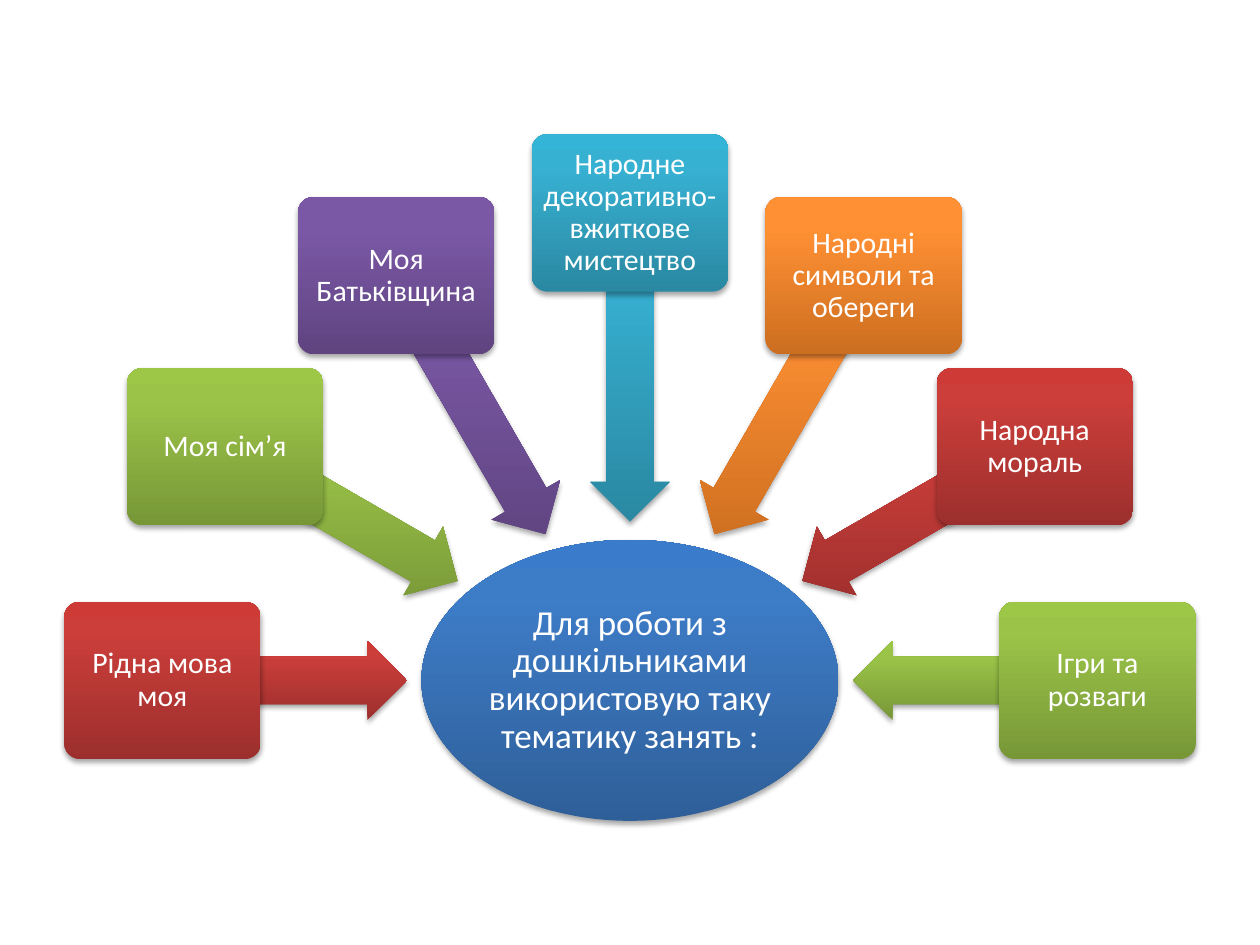
"""Builds a slide where seven topics point at a central theme."""
import math

import lxml.etree
import pptx
import pptx.dml.color
import pptx.enum.shapes
import pptx.enum.text
import pptx.oxml
import pptx.util

Inches = pptx.util.Inches
SHAPES = pptx.enum.shapes.MSO_SHAPE
NAMESPACE = 'xmlns:a="http://schemas.openxmlformats.org/drawingml/2006/main"'

BLUE = ("2F5F99", "3D7CC7", "3A7CCB")
RED = ("9C2F2D", "CB3E3A", "CE3B37")
GREEN = ("779737", "9BC348", "9DC746")
PURPLE = ("5F4480", "7B58A6", "7C57A8")
TEAL = ("2A88A2", "37B1D2", "34B4D6")
ORANGE = ("CC6E20", "FF9034", "FF9136")

THEME = "Для роботи з дошкільниками використовую таку тематику занять :"
TOPICS = [
    ("Рідна мова моя", RED),
    ("Моя сім’я", GREEN),
    ("Моя Батьківщина", PURPLE),
    ("Народне декоративно-вжиткове мистецтво", TEAL),
    ("Народні символи та обереги", ORANGE),
    ("Народна мораль", RED),
    ("Ігри та розваги", GREEN),
]
ARROW_LENGTHS = [1.94, 2.13, 2.37, 2.45, 2.37, 2.13, 1.94]
ORBIT = 3.71


def color(hex_string):
    """Return the colour for a hex string."""
    return pptx.dml.color.RGBColor.from_string(hex_string)


def add_glossy_shape(page, kind, center, size, shades):
    """Add a shape around a center with an upright gradient and a soft shadow."""
    (x, y), (width, height) = center, size
    shape = page.shapes.add_shape(
        kind, Inches(x - width / 2), Inches(y - height / 2), Inches(width), Inches(height))
    shape.line.fill.background()
    stops = "".join(
        f'<a:gs pos="{position * 1000}"><a:srgbClr val="{shade}"/></a:gs>'
        for position, shade in zip((0, 80, 100), shades))
    gradient = pptx.oxml.parse_xml(
        f'<a:gradFill {NAMESPACE} rotWithShape="0"><a:gsLst>{stops}</a:gsLst>'
        '<a:lin ang="16200000" scaled="0"/></a:gradFill>')
    outline = shape.line._get_or_add_ln()
    outline.addprevious(gradient)
    shadow = pptx.oxml.parse_xml(
        f'<a:effectLst {NAMESPACE}><a:outerShdw blurRad="{pptx.util.Pt(3.1)}" '
        f'dist="{pptx.util.Pt(1.8)}" dir="5400000" rotWithShape="0">'
        '<a:srgbClr val="000000"><a:alpha val="35000"/></a:srgbClr>'
        '</a:outerShdw></a:effectLst>')
    outline.addnext(shadow)
    return shape


def write_text(shape, text, size=17, margin=0.04, font="Calibri", fill="FFFFFF"):
    """Write one centred paragraph in a shape."""
    frame = shape.text_frame
    frame.word_wrap = True
    frame.vertical_anchor = pptx.enum.text.MSO_ANCHOR.MIDDLE
    frame.margin_left = frame.margin_right = Inches(margin)
    frame.margin_top = frame.margin_bottom = Inches(margin)
    para = frame.paragraphs[0]
    para.alignment = pptx.enum.text.PP_ALIGN.CENTER
    para.line_spacing = 0.9
    span = para.add_run()
    span.text = text
    span.font.size = pptx.util.Pt(size)
    span.font.name = font
    span.font.color.rgb = color(fill)


def add_theme(page, center):
    """Add the central ellipse with the theme."""
    ellipse = add_glossy_shape(page, SHAPES.OVAL, center, (3.31, 2.23), BLUE)
    write_text(ellipse, THEME, size=20, margin=0.01)


def add_topic(page, center, angle, arrow_length, text, shades):
    """Add a topic box on the orbit and its arrow towards the center."""
    def on_ray(distance):
        """Return the point at a distance from the center."""
        return (center[0] + distance * math.cos(math.radians(angle)),
                center[1] + distance * math.sin(math.radians(angle)))

    arrow = add_glossy_shape(
        page, SHAPES.LEFT_ARROW, on_ray(ORBIT - arrow_length / 2), (arrow_length, 0.63), shades)
    arrow.rotation = angle % 360
    arrow.adjustments[0] = 0.6
    arrow.adjustments[1] = 0.5
    box = add_glossy_shape(
        page, SHAPES.ROUNDED_RECTANGLE, on_ray(ORBIT), (1.56, 1.25), shades)
    box.adjustments[0] = 0.1
    write_text(box, text)


def add_radial_diagram(page, center):
    """Add the theme and fan the topics out over a half circle."""
    add_theme(page, center)
    step = 180 / (len(TOPICS) - 1)
    for index, ((text, shades), length) in enumerate(zip(TOPICS, ARROW_LENGTHS)):
        add_topic(page, center, 180 + index * step, length, text, shades)


def main():
    """Build and save the deck."""
    deck = pptx.Presentation()
    deck.slide_width, deck.slide_height = Inches(10), Inches(7.5)
    page = deck.slides.add_slide(deck.slide_layouts[6])
    add_radial_diagram(page, (5, 5.4))
    deck.save("out.pptx")


if __name__ == "__main__":
    main()
